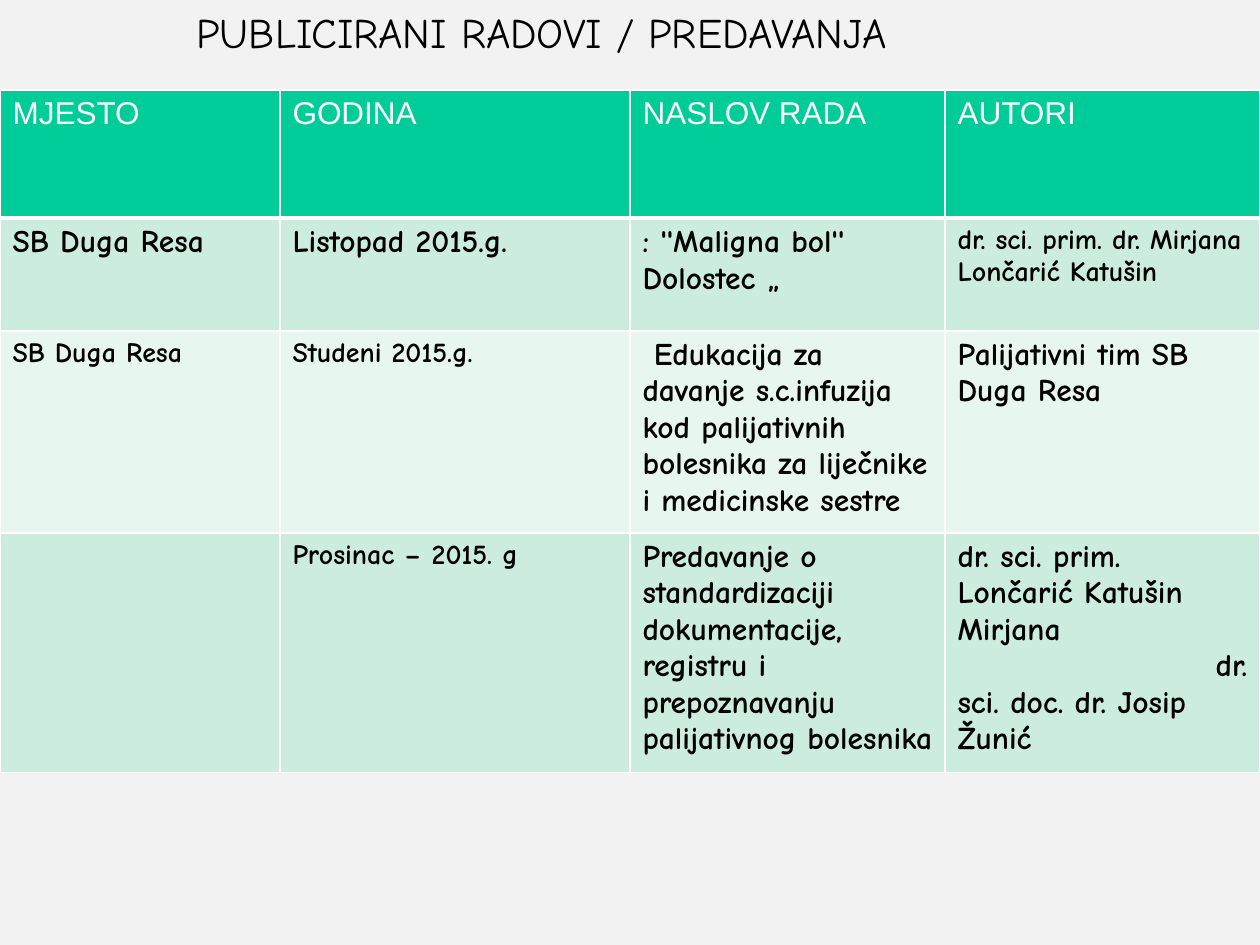
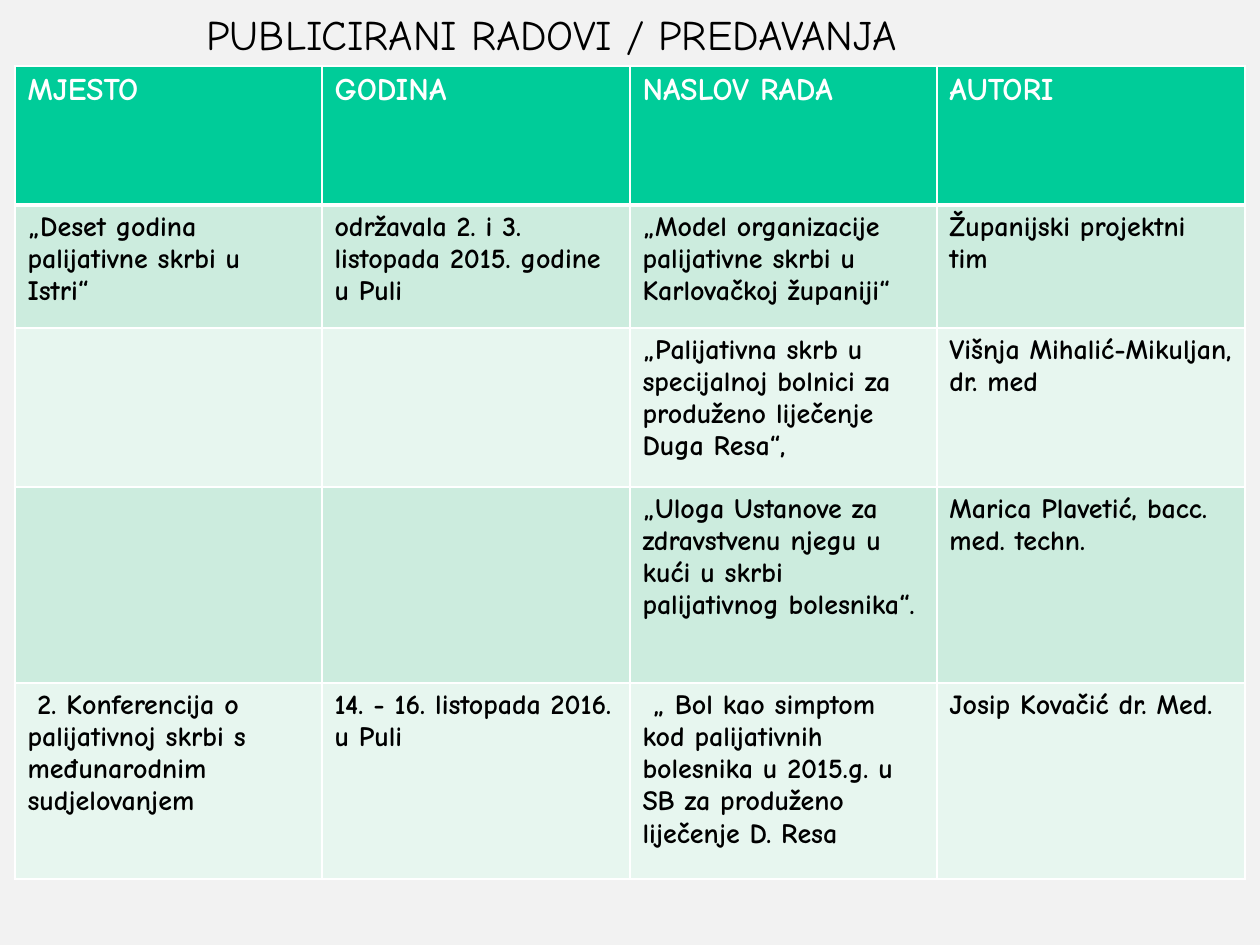
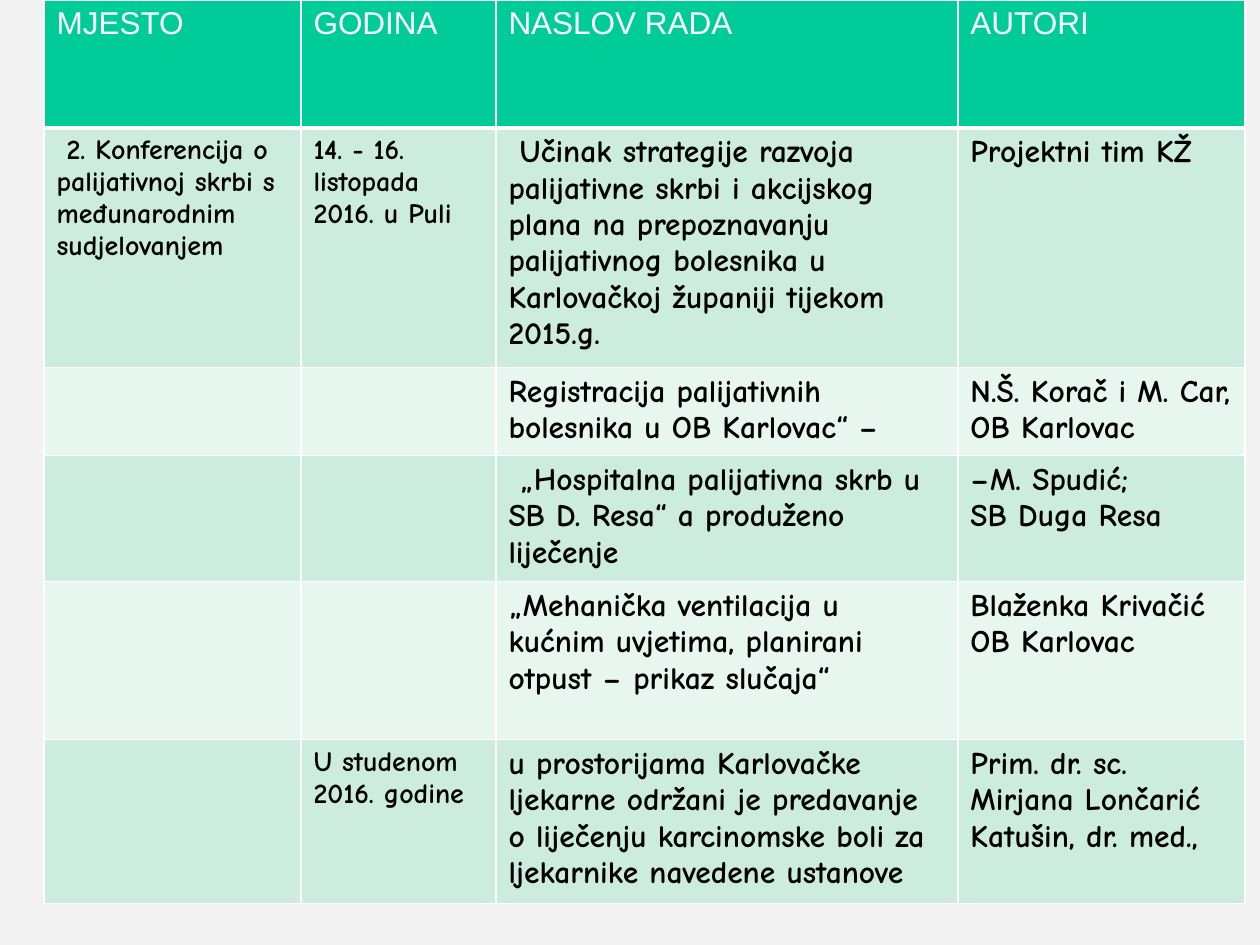
import dataclasses
import itertools

import pptx
import pptx.dml.color
import pptx.enum.text
import pptx.oxml.ns
import pptx.util
from lxml import etree

SCALE = 914400 / 126  # EMU in one px


@dataclasses.dataclass(frozen=True)
class Theme:
    back: str = "F2F2F2"
    head: str = "00CC99"
    bands: tuple = ("CCECDE", "E7F6EF")
    light: str = "FFFFFF"
    dark: str = "000000"
    plain: str = "Arial"
    hand: str = "Comic Neue"
    title: int = 24
    body: int = 18
    small: int = 16
    rule: int = 1
    thick: int = 3


def px(n):
    return pptx.util.Emu(round(n * SCALE))


def rgb(code):
    return pptx.dml.color.RGBColor.from_string(code)


class Deck:
    def __init__(self, theme):
        self.theme = theme
        self.prs = pptx.Presentation()
        self.prs.slide_width, self.prs.slide_height = px(1260), px(945)
        self.slide = None

    def page(self):
        self.slide = self.prs.slides.add_slide(self.prs.slide_layouts[6])
        fill = self.slide.background.fill
        fill.solid()
        fill.fore_color.rgb = rgb(self.theme.back)

    def label(self, frame, text, size, face, color, bold=False):
        """Fill a text frame, one paragraph for each line of text."""
        frame.text = text
        for para in frame.paragraphs:
            font = para.font
            font.size, font.name, font.bold = pptx.util.Pt(size), face, bold
            font.color.rgb = rgb(color)

    def title(self, text, x, y):
        frame = self.slide.shapes.add_textbox(px(x), px(y), px(863), px(63)).text_frame
        frame.word_wrap = True
        frame.auto_size = pptx.enum.text.MSO_AUTO_SIZE.SHAPE_TO_FIT_TEXT
        self.label(frame, text, self.theme.title, self.theme.hand, self.theme.dark)

    def edge(self, cell, base):
        """Draw the four cell borders, the bottom one base points wide."""
        qn = pptx.oxml.ns.qn
        props = cell._tc.get_or_add_tcPr()
        rule = self.theme.rule
        for side, width in zip("LRTB", (rule, rule, rule, base)):
            line = etree.SubElement(props, qn("a:ln" + side), w=str(pptx.util.Pt(width)))
            fill = etree.SubElement(line, qn("a:solidFill"))
            etree.SubElement(fill, qn("a:srgbClr"), val=self.theme.light)

    def table(self, x, y, cols, highs, rows, small, face, bold=False):
        """Add a table; small holds the (row, column) of cells in small type."""
        look = self.theme
        grid = self.slide.shapes.add_table(
            len(highs), len(cols), px(x), px(y), px(sum(cols)), px(sum(highs))).table
        grid.first_row = grid.horz_banding = False
        for col, width in zip(grid.columns, cols):
            col.width = px(width)
        for row, high in zip(grid.rows, highs):
            row.height = px(high)
        for r, texts in enumerate([HEAD] + rows):
            for c, text in enumerate(texts):
                cell = grid.cell(r, c)
                self.edge(cell, look.rule if r else look.thick)
                cell.fill.solid()
                cell.fill.fore_color.rgb = rgb(look.bands[(r - 1) % 2] if r else look.head)
                if not r:
                    self.label(cell.text_frame, text, look.body, face, look.light, bold)
                elif text:
                    size = look.small if (r, c) in small else look.body
                    self.label(cell.text_frame, text, size, look.hand, look.dark, True)
        return grid


TITLE = "PUBLICIRANI RADOVI / PREDAVANJA"
HEAD = ["MJESTO", "GODINA", "NASLOV RADA", "AUTORI"]
EVENT = " 2. Konferencija o palijativnoj skrbi s međunarodnim sudjelovanjem"
DATES = "14. - 16. listopada 2016. u Puli"

TALKS = [
    ["SB Duga Resa", "Listopad 2015.g.", ": ''Maligna bol'' Dolostec „",
     "dr. sci. prim. dr. Mirjana Lončarić Katušin"],
    ["SB Duga Resa", "Studeni 2015.g.",
     " Edukacija za davanje s.c.infuzija kod palijativnih bolesnika "
     "za liječnike i medicinske sestre",
     "Palijativni tim SB Duga Resa"],
    ["", "Prosinac – 2015. g",
     "Predavanje o standardizaciji dokumentacije, registru i prepoznavanju "
     "palijativnog bolesnika",
     "dr. sci. prim. Lončarić Katušin Mirjana\ndr.\nsci. doc. dr. Josip Žunić"],
]

ISTRIA = [
    ["„Deset godina palijativne skrbi u Istri“",
     "održavala 2. i 3. listopada 2015. godine u Puli",
     "„Model organizacije palijativne skrbi u Karlovačkoj županiji“",
     "Županijski projektni tim"],
    ["", "",
     "„Palijativna skrb u specijalnoj bolnici za produženo liječenje Duga Resa“,",
     "Višnja Mihalić-Mikuljan, dr. med"],
    ["", "",
     "„Uloga Ustanove za zdravstvenu njegu u kući u skrbi palijativnog bolesnika“.",
     "Marica Plavetić, bacc. med. techn."],
    [EVENT, DATES,
     " „ Bol kao simptom kod palijativnih bolesnika u 2015.g. u SB za produženo "
     "liječenje D. Resa",
     "Josip Kovačić dr. Med."],
]

PULA = [
    [EVENT, DATES,
     " Učinak strategije razvoja palijativne skrbi i akcijskog plana na prepoznavanju "
     "palijativnog bolesnika u Karlovačkoj županiji tijekom 2015.g.",
     "Projektni tim KŽ"],
    ["", "", "Registracija palijativnih bolesnika u OB Karlovac“ –",
     "N.Š. Korač i M. Car, OB Karlovac"],
    ["", "", " „Hospitalna palijativna skrb u SB D. Resa“ a produženo liječenje",
     "–M. Spudić;\nSB Duga Resa"],
    ["", "", "„Mehanička ventilacija u kućnim uvjetima, planirani otpust – prikaz slučaja“",
     "Blaženka Krivačić\nOB Karlovac"],
    ["", "U studenom 2016. godine",
     "u prostorijama Karlovačke ljekarne održani je predavanje o liječenju "
     "karcinomske boli za ljekarnike navedene ustanove",
     "Prim. dr. sc. Mirjana Lončarić Katušin, dr. med.,"],
]


def main():
    look = Theme()
    deck = Deck(look)

    deck.page()
    deck.title(TITLE, 184, 0)
    grid = deck.table(0, 90, [280, 350, 315, 315], [128, 113, 202, 239], TALKS,
                      {(1, 3), (2, 0), (2, 1), (3, 1)}, look.plain)
    names = grid.cell(3, 3).text_frame.paragraphs
    names[1].alignment = pptx.enum.text.PP_ALIGN.RIGHT

    deck.page()
    deck.title(TITLE, 194, 2)
    deck.table(15, 66, [307, 308] * 2, [139, 123, 159, 196, 196], ISTRIA,
               set(itertools.product(range(1, 5), range(4))), look.hand, True)

    deck.page()
    deck.table(44, 0, [257, 195, 462, 287], [128, 231, 86, 121, 158, 159], PULA,
               set(itertools.product(range(1, 6), range(2))), look.plain)

    deck.prs.save("out.pptx")


if __name__ == "__main__":
    main()
